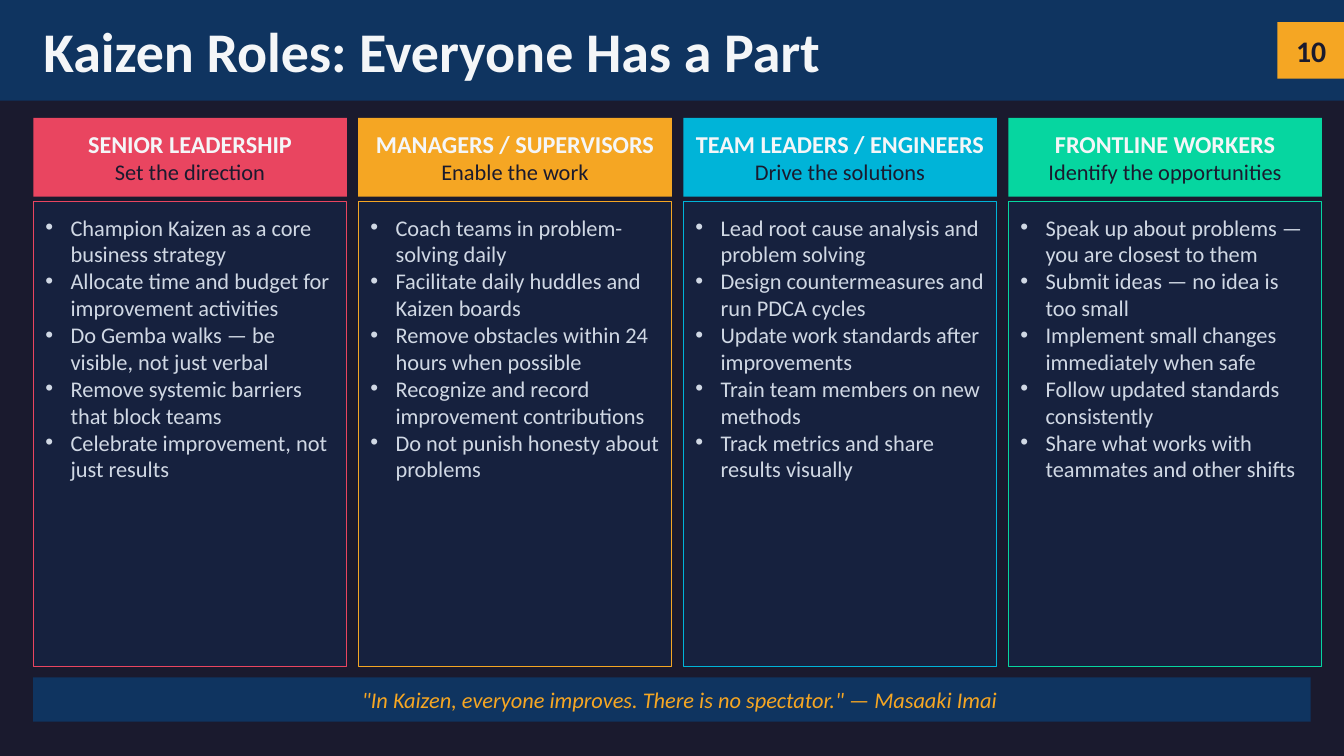
from dataclasses import dataclass

from lxml import etree
from pptx import Presentation
from pptx.dml.color import RGBColor
from pptx.enum import shapes, text
from pptx.oxml import ns
from pptx.util import Inches, Pt

TITLE = "Kaizen Roles: Everyone Has a Part"
PAGE = "10"
QUOTE = '"In Kaizen, everyone improves. There is no spectator." — Masaaki Imai'
ROLES = [
    ("SENIOR LEADERSHIP", "Set the direction", "E94560", [
        "Champion Kaizen as a core business strategy",
        "Allocate time and budget for improvement activities",
        "Do Gemba walks — be visible, not just verbal",
        "Remove systemic barriers that block teams",
        "Celebrate improvement, not just results",
    ]),
    ("MANAGERS / SUPERVISORS", "Enable the work", "F5A623", [
        "Coach teams in problem-solving daily",
        "Facilitate daily huddles and Kaizen boards",
        "Remove obstacles within 24 hours when possible",
        "Recognize and record improvement contributions",
        "Do not punish honesty about problems",
    ]),
    ("TEAM LEADERS / ENGINEERS", "Drive the solutions", "00B4D8", [
        "Lead root cause analysis and problem solving",
        "Design countermeasures and run PDCA cycles",
        "Update work standards after improvements",
        "Train team members on new methods",
        "Track metrics and share results visually",
    ]),
    ("FRONTLINE WORKERS", "Identify the opportunities", "06D6A0", [
        "Speak up about problems — you are closest to them",
        "Submit ideas — no idea is too small",
        "Implement small changes immediately when safe",
        "Follow updated standards consistently",
        "Share what works with teammates and other shifts",
    ]),
]


@dataclass(frozen=True)
class Theme:
    font: str = "Calibri"
    dark: str = "1A1A2E"
    band: str = "0F3460"
    panel: str = "16213E"
    accent: str = "F5A623"
    light: str = "F4F6F8"
    body: str = "D0D8E4"
    title_size: float = 40
    page_size: float = 21.3
    role_size: float = 17.3
    body_size: float = 16


THEME = Theme()
CENTER = text.PP_ALIGN.CENTER
MARGIN = 0.33
COLUMN_WIDTH = 3.11
LAST_COLUMN = 10
PITCH = (LAST_COLUMN - MARGIN) / (len(ROLES) - 1)


def add_box(slide, left, top, width, height, fill, line=None):
    box = slide.shapes.add_shape(
        shapes.MSO_SHAPE.RECTANGLE,
        Inches(left), Inches(top), Inches(width), Inches(height))
    box.shadow.inherit = False
    box.fill.solid()
    box.fill.fore_color.rgb = RGBColor.from_string(fill)
    if line:
        box.line.color.rgb = RGBColor.from_string(line)
        box.line.width = Pt(0.75)
    else:
        box.line.fill.background()
    return box


def set_frame(shape, anchor=text.MSO_ANCHOR.MIDDLE, insets=(0.1, 0.05, 0.1, 0.05)):
    frame = shape.text_frame
    frame.word_wrap = True
    frame.auto_size = text.MSO_AUTO_SIZE.NONE
    frame.vertical_anchor = anchor
    (frame.margin_left, frame.margin_top,
     frame.margin_right, frame.margin_bottom) = map(Inches, insets)


def write(shape, words, size, color, align=CENTER, bold=False, italic=False, bullet=False):
    frame = shape.text_frame
    paragraph = frame.paragraphs[0]
    if paragraph.runs:
        paragraph = frame.add_paragraph()
    paragraph.alignment = align
    if bullet:
        properties = paragraph._p.get_or_add_pPr()
        properties.set("marL", str(Inches(0.25)))
        properties.set("indent", str(-Inches(0.25)))
        etree.SubElement(properties, ns.qn("a:buFont"), typeface="Arial")
        etree.SubElement(properties, ns.qn("a:buChar"), char="•")
    run = paragraph.add_run()
    run.text = words
    run.font.name = THEME.font
    run.font.size = Pt(size)
    run.font.bold = bold
    run.font.italic = italic
    run.font.color.rgb = RGBColor.from_string(color)


def add_heading(slide):
    band = add_box(slide, 0, 0, 13.33, 1, THEME.band)
    title = slide.shapes.title
    title.left, title.top, title.width, title.height = map(
        Inches, (MARGIN, 0.11, 11.11, 0.78))
    title.element.addprevious(band.element)
    set_frame(title)
    write(title, TITLE, THEME.title_size, THEME.light, align=text.PP_ALIGN.LEFT, bold=True)
    page = add_box(slide, 12.67, 0.22, 0.67, 0.56, THEME.accent)
    set_frame(page)
    write(page, PAGE, THEME.page_size, THEME.dark, bold=True)


def add_role(slide, left, role, purpose, color, duties):
    header = add_box(slide, left, 1.17, COLUMN_WIDTH, 0.78, color)
    set_frame(header)
    write(header, role, THEME.role_size, THEME.light, bold=True)
    write(header, purpose, THEME.body_size, THEME.dark)
    panel = add_box(slide, left, 2, COLUMN_WIDTH, 4.61, THEME.panel, line=color)
    set_frame(panel, text.MSO_ANCHOR.TOP, (0.12, 0.12, 0.12, 0.05))
    for duty in duties:
        write(panel, duty, THEME.body_size, THEME.body, align=text.PP_ALIGN.LEFT, bullet=True)


def main():
    deck = Presentation()
    deck.slide_width, deck.slide_height = Inches(13.33), Inches(7.5)
    slide = deck.slides.add_slide(deck.slide_layouts[5])
    slide.background.fill.solid()
    slide.background.fill.fore_color.rgb = RGBColor.from_string(THEME.dark)
    add_heading(slide)
    for index, role in enumerate(ROLES):
        add_role(slide, MARGIN + index * PITCH, *role)
    quote = add_box(slide, MARGIN, 6.72, 12.67, 0.44, THEME.band)
    set_frame(quote, insets=(0.25, 0.05, 0.1, 0.05))
    write(quote, QUOTE, THEME.body_size, THEME.accent, italic=True)
    deck.save("out.pptx")


if __name__ == "__main__":
    main()
